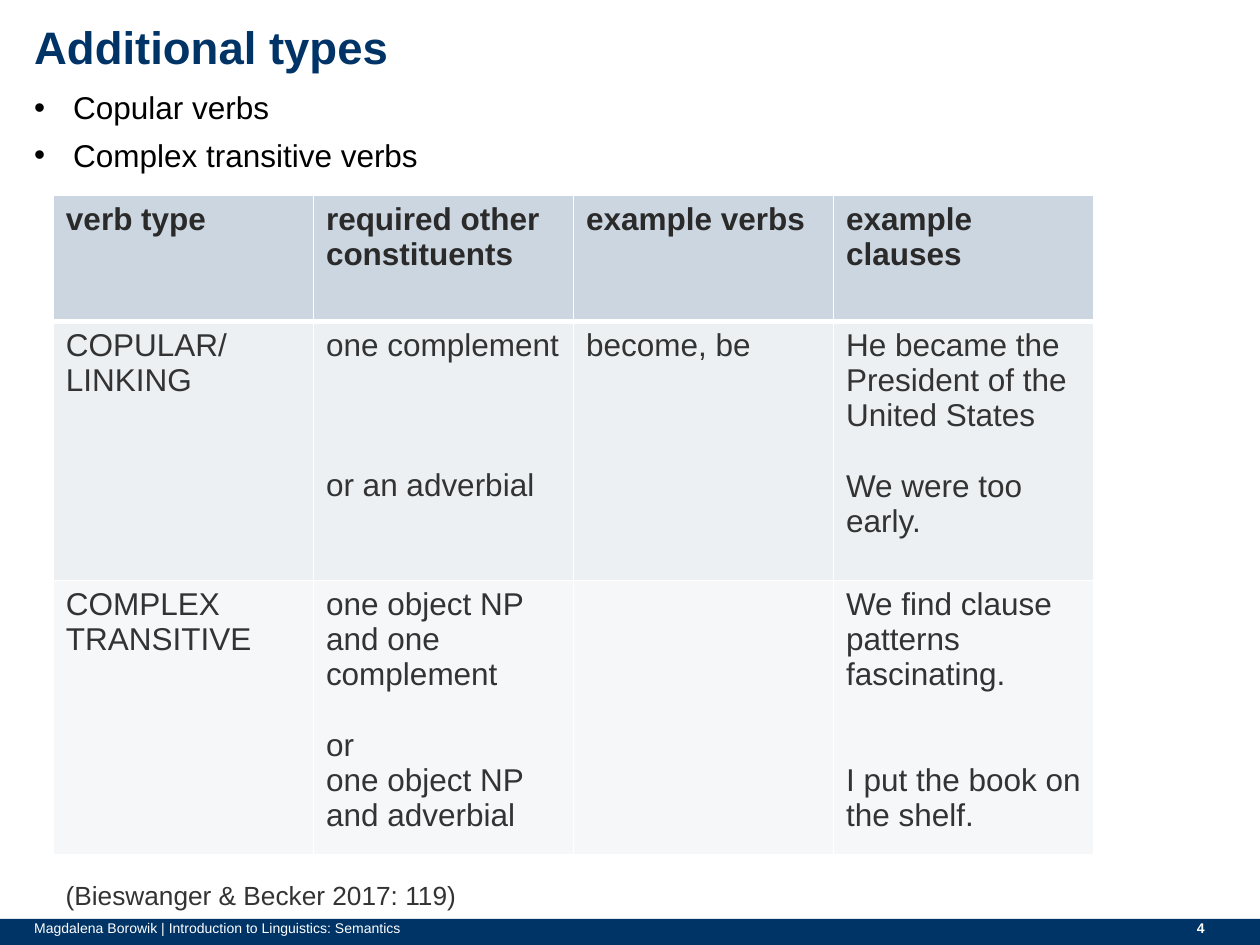
from lxml.etree import SubElement
from pptx import Presentation
from pptx.dml.color import RGBColor
from pptx.enum.shapes import MSO_SHAPE
from pptx.enum.text import PP_ALIGN
from pptx.oxml import parse_xml
from pptx.oxml.ns import nsdecls, qn
from pptx.util import Pt

NAVY = RGBColor(0x00, 0x33, 0x66)
WHITE = RGBColor(0xFF, 0xFF, 0xFF)
BLACK = RGBColor(0x00, 0x00, 0x00)
HEAD_TEXT = RGBColor(0x2A, 0x2A, 0x2A)
BODY_TEXT = RGBColor(0x33, 0x33, 0x33)
ROW_FILLS = [RGBColor(0xCC, 0xD6, 0xE0), RGBColor(0xEC, 0xF0, 0xF3),
             RGBColor(0xF6, 0xF7, 0xF9)]

LINE = 20.1  # height of one 18 pt text line
ROW_HEIGHTS = [72, 148, 148]
COL_WIDTH = 148.6

# Each cell lists its paragraphs as (text, lines of space before)
ROWS = [
    [[("verb type", 0)], [("required other constituents", 0)],
     [("example verbs", 0)], [("example clauses", 0)]],
    [[("COPULAR/", 0), ("LINKING", 0)],
     [("one complement", 0), ("or an adverbial", 3)],
     [("become, be", 0)],
     [("He became the President of the United States", 0),
      ("We were too early.", 1)]],
    [[("COMPLEX TRANSITIVE", 0)],
     [("one object NP and one complement", 0), ("or", 1),
      ("one object NP", 0), ("and adverbial", 0)],
     [],
     [("We find clause patterns fascinating.", 0),
      ("I put the book on the shelf.", 2)]],
]


def add_text(tf, text, first=True, size=18, color=BLACK, bold=False,
             align=None, spacing=None, before=0, bullet=False):
    p = tf.paragraphs[0] if first else tf.add_paragraph()
    if bullet:
        pPr = p._p.get_or_add_pPr()
        pPr.set("marL", str(Pt(22.3)))
        pPr.set("indent", str(-Pt(22.3)))
        SubElement(pPr, qn("a:buFont"), typeface="Arial")
        SubElement(pPr, qn("a:buChar"), char="•")
    if align is not None:
        p.alignment = align
    if spacing:
        p.line_spacing = spacing
    if before and not first:
        p.space_before = Pt(before)
    r = p.add_run()
    r.text = text
    r.font.name = "Arial"
    r.font.size = Pt(size)
    r.font.bold = bold
    r.font.color.rgb = color


def add_box(s, x, y, w, h, inset=(7.2, 3.6), wrap=True):
    tf = s.shapes.add_textbox(Pt(x), Pt(y), Pt(w), Pt(h)).text_frame
    tf.word_wrap = wrap
    tf.margin_left = tf.margin_right = Pt(inset[0])
    tf.margin_top = tf.margin_bottom = Pt(inset[1])
    return tf


def add_bar(s, x, y, w, h):
    sp = s.shapes.add_shape(MSO_SHAPE.RECTANGLE, Pt(x), Pt(y), Pt(w), Pt(h))
    sp.shadow.inherit = False
    sp.fill.solid()
    sp.fill.fore_color.rgb = NAVY
    sp.line.fill.background()


def set_borders(cell, bottom, top):
    tcPr = cell._tc.get_or_add_tcPr()
    for i, (side, width) in enumerate(
            [("L", 1), ("R", 1), ("T", top), ("B", bottom)]):
        tcPr.insert(i, parse_xml(
            f'<a:ln{side} {nsdecls("a")} w="{Pt(width)}"><a:solidFill>'
            f'<a:srgbClr val="{WHITE}"/></a:solidFill></a:ln{side}>'))


def add_verb_table(s, x, y):
    table = s.shapes.add_table(len(ROWS), len(ROWS[0]), Pt(x), Pt(y),
                               Pt(COL_WIDTH * len(ROWS[0])),
                               Pt(sum(ROW_HEIGHTS))).table
    for col in table.columns:
        col.width = Pt(COL_WIDTH)
    for i, row in enumerate(ROWS):
        table.rows[i].height = Pt(ROW_HEIGHTS[i])
        for j, paragraphs in enumerate(row):
            cell = table.cell(i, j)
            cell.fill.solid()
            cell.fill.fore_color.rgb = ROW_FILLS[i]
            set_borders(cell, bottom=3 if i == 0 else 1, top=3 if i == 1 else 1)
            for k, (text, gap) in enumerate(paragraphs):
                add_text(cell.text_frame, text, first=k == 0, bold=i == 0,
                         color=BODY_TEXT if i else HEAD_TEXT,
                         before=gap * LINE)


def main():
    prs = Presentation()
    prs.slide_width, prs.slide_height = Pt(720), Pt(540)
    s = prs.slides.add_slide(prs.slide_layouts[6])

    # Footer bar and slide number
    add_bar(s, 0, 525, 720, 15)
    add_text(add_box(s, 599, 522, 96.5, 18.7), "4", size=8, color=WHITE,
             bold=True, align=PP_ALIGN.RIGHT)

    # Title and bullets
    add_text(add_box(s, 19.5, 15.8, 680.4, 32, inset=(0, 0)),
             "Additional types", size=26, color=NAVY, bold=True, spacing=0.85)
    tf = add_box(s, 19.5, 50, 680.4, 54, inset=(0, 0))
    for i, text in enumerate(["Copular verbs", "Complex transitive verbs"]):
        add_text(tf, text, first=i == 0, spacing=1.02, before=5, bullet=True)

    # Footer text
    add_text(add_box(s, 19.5, 522, 471, 18, inset=(0, 3.6)),
             "Magdalena Borowik | Introduction to Linguistics: Semantics",
             size=8, color=WHITE)

    # Verb table and its source
    add_verb_table(s, 30.5, 111.6)
    add_text(add_box(s, 30.5, 499, 240.5, 25, wrap=False),
             "(Bieswanger & Becker 2017: 119)", size=15, color=BODY_TEXT)

    prs.save("out.pptx")


if __name__ == "__main__":
    main()
